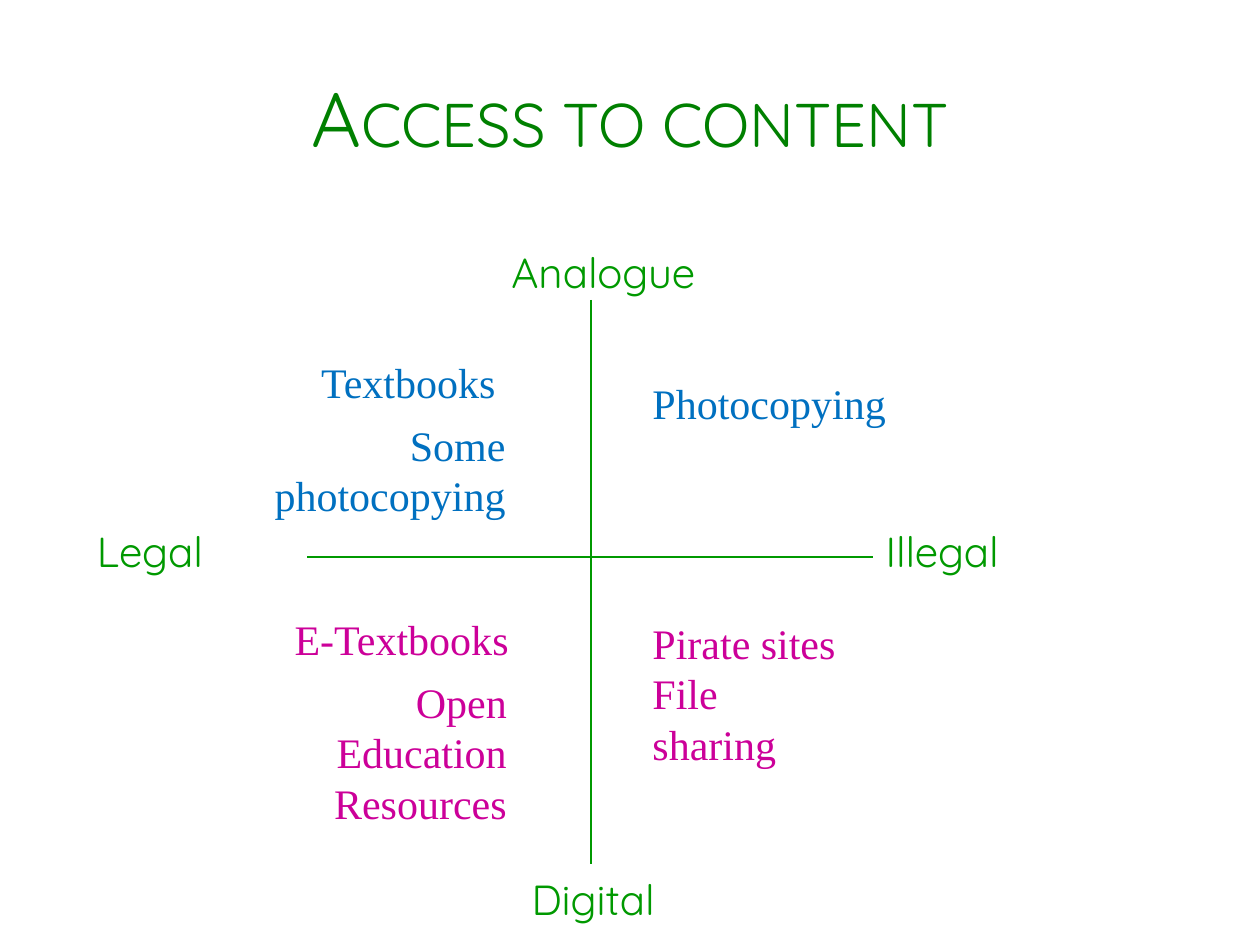
import pptx
import pptx.dml.color
import pptx.enum.shapes
import pptx.enum.text
import pptx.oxml.ns
import pptx.util
from lxml import etree

ALIGN = pptx.enum.text.PP_ALIGN
ANCHOR = pptx.enum.text.MSO_ANCHOR
inches = pptx.util.Inches

# Content: text, (left, top, width, height)
TITLE = ("Access to content", (0.5, 0.3, 9, 1.25))
AXIS_LABELS = [
    ("Legal", (0.67, 4.12, 1.1, 0.5)),
    ("Digital", (4.12, 6.88, 1.22, 0.51)),
    ("Analogue", (3.96, 1.91, 1.82, 0.51)),
    ("Illegal", (6.93, 4.12, 1.15, 0.5)),
]
AXES = [(4.69, 2.38, 4.69, 6.86), (2.44, 4.42, 6.93, 4.42)]

ANALOGUE, DIGITAL = "0070C0", "CC0099"
TITLE_GREEN, AXIS_GREEN = "008000", "009900"

# Legal side: one group per quadrant, with alignment for each item
LEGAL_QUADRANTS = [
    (ANALOGUE, [
        ("Textbooks", (2.45, 2.78, 1.68, 0.51), ALIGN.LEFT),
        ("Some photocopying", (1.52, 3.28, 2.59, 0.91), ALIGN.RIGHT),
    ]),
    (DIGITAL, [
        ("E-Textbooks", (2.24, 4.82, 1.93, 0.51), ALIGN.LEFT),
        ("Open Education Resources", (2.44, 5.32, 1.68, 1.31), ALIGN.RIGHT),
    ]),
]
ILLEGAL_QUADRANTS = [
    (ANALOGUE, "Photocopying", (5.08, 2.95, 2.28, 0.5)),
    (DIGITAL, "Pirate sites\nFile sharing", (5.08, 4.85, 1.68, 1.31)),
]


def rgb(color):
    return pptx.dml.color.RGBColor.from_string(color)


def add_text(shapes, text, box, color, font="Times New Roman", size=24,
             align=ALIGN.LEFT, wrap=True, anchor=ANCHOR.TOP):
    shape = shapes.add_textbox(*map(inches, box))
    frame = shape.text_frame
    frame.text = text
    frame.word_wrap = wrap
    frame.vertical_anchor = anchor
    for paragraph in frame.paragraphs:
        paragraph.alignment = align
        for run in paragraph.runs:
            run.font.name = font
            run.font.size = pptx.util.Pt(size)
            run.font.color.rgb = rgb(color)
    return shape


def add_axis(shapes, ends):
    line = shapes.add_connector(
        pptx.enum.shapes.MSO_CONNECTOR.STRAIGHT, *map(inches, ends))
    line.line.color.rgb = rgb(AXIS_GREEN)
    line.line.width = pptx.util.Pt(0.75)
    etree.SubElement(line._element.spPr, pptx.oxml.ns.qn("a:effectLst"))


def main():
    presentation = pptx.Presentation()
    presentation.slide_width = inches(10)
    presentation.slide_height = inches(7.5)
    slide = presentation.slides.add_slide(presentation.slide_layouts[6])

    # Title in small capitals
    title = add_text(slide.shapes, *TITLE, TITLE_GREEN, "Quicksand", 44,
                     ALIGN.CENTER, anchor=ANCHOR.MIDDLE)
    title_run = title.text_frame.paragraphs[0].runs[0]
    title_run.font._element.set("cap", "small")

    # Axes and their labels
    for ends in AXES:
        add_axis(slide.shapes, ends)
    for text, box in AXIS_LABELS:
        add_text(slide.shapes, text, box, AXIS_GREEN, "Quicksand", wrap=False)

    # Quadrants
    for color, items in LEGAL_QUADRANTS:
        group = slide.shapes.add_group_shape()
        for text, box, align in items:
            add_text(group.shapes, text, box, color, align=align)
    for color, text, box in ILLEGAL_QUADRANTS:
        add_text(slide.shapes, text, box, color)

    presentation.save("out.pptx")


if __name__ == "__main__":
    main()
